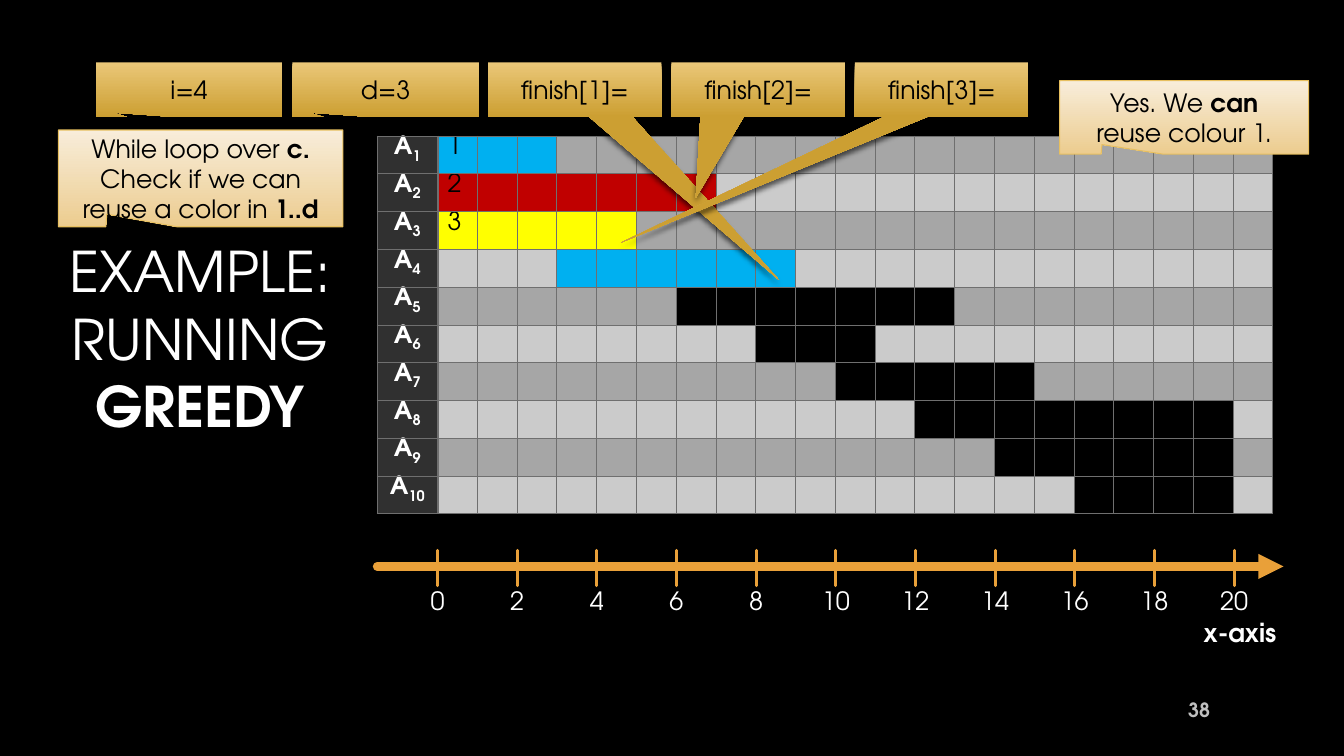
from lxml import etree
from pptx import Presentation
from pptx.dml.color import RGBColor
from pptx.enum.shapes import MSO_CONNECTOR, MSO_SHAPE
from pptx.enum.text import MSO_ANCHOR, PP_ALIGN
from pptx.oxml.ns import qn
from pptx.util import Inches, Pt

LEFT, CENTER, RIGHT = PP_ALIGN.LEFT, PP_ALIGN.CENTER, PP_ALIGN.RIGHT
TOP, MIDDLE = MSO_ANCHOR.TOP, MSO_ANCHOR.MIDDLE
CALLOUT, STRAIGHT = MSO_SHAPE.RECTANGULAR_CALLOUT, MSO_CONNECTOR.STRAIGHT
FONT = "TeX Gyre Adventor"
WHITE, BLACK, ORANGE, GRID = "FFFFFF", "000000", "E9A039", "6F6F6F"
HEADER, BANDS = "303030", ("A6A6A6", "CBCBCB")
BLUE, RED, YELLOW = "00B0F0", "C00000", "FFFF00"

# Text is a list of paragraphs; each paragraph is a list of (text, bold) runs.
TITLE = [[("EXAMPLE: RUNNING ", False), ("GREEDY", True)]]

# start, finish, colour, colour number shown
ACTIVITIES = [
    (0, 3, BLUE, "1"), (0, 7, RED, "2"), (0, 5, YELLOW, "3"), (3, 9, BLUE, ""),
    (6, 13, BLACK, ""), (8, 11, BLACK, ""), (10, 15, BLACK, ""),
    (12, 20, BLACK, ""), (14, 20, BLACK, ""), (16, 20, BLACK, ""),
]
SLOTS = 21

# left, top, width, height, pointer, text
NOTES = [
    (10.51, 0.8, 2.47, 0.73, (-0.33, 0.37),
     [[("Yes. We ", False), ("can\v", True), ("reuse colour 1.", False)]]),
    (0.58, 1.29, 2.82, 0.96, (-0.33, 0.37),
     [[("While loop over ", False), ("c.", True)],
      [("Check if we can reuse a color in ", False), ("1..d", True)]]),
]
# left, width, pointer, text
VARIABLES = [
    (0.95, 1.85, (-0.41, 0.42), "i=4"),
    (2.9, 1.85, (-0.41, 0.42), "d=3"),
    (4.84, 1.72, (1.18, 3.5), "finish[1]="),
    (6.66, 1.72, (-0.36, 1.99), "finish[2]="),
    (8.48, 1.72, (-1.85, 2.81), "finish[3]="),
]

TABLE_X, TABLE_Y, TABLE_W, TABLE_H, HEAD_W = 3.74, 1.35, 8.89, 3.75, 0.6
ZERO_X, TICK_GAP, LABEL_W = 4.34, 0.79, 0.9
AXIS_Y, AXIS_END = 5.62, 12.73


def rgb(value):
    return RGBColor.from_string(value)


def write(tf, paragraphs, size=18, color=WHITE, align=CENTER, anchor=TOP, wrap=True):
    tf.word_wrap = wrap
    tf.vertical_anchor = anchor
    for i, runs in enumerate(paragraphs):
        p = tf.paragraphs[0] if i == 0 else tf.add_paragraph()
        add_runs(p, runs, size, color, align)


def add_runs(p, runs, size=18, color=WHITE, align=CENTER):
    p.alignment = align
    for text, bold in runs:
        for i, line in enumerate(text.split("\v")):
            if i:
                p.add_line_break()
            if line:
                r = p.add_run()
                r.text = line
                r.font.name, r.font.size, r.font.bold = FONT, Pt(size), bold
                r.font.color.rgb = rgb(color)


def add_text(s, x, y, w, text, bold=False, **fmt):
    box = s.shapes.add_textbox(Inches(x), Inches(y), Inches(w), Inches(0.4))
    write(box.text_frame, [[(text, bold)]], **fmt)


def add_line(s, x1, y1, x2, y2, width, arrow=False):
    line = s.shapes.add_connector(STRAIGHT, Inches(x1), Inches(y1), Inches(x2), Inches(y2))
    line.line.color.rgb = rgb(ORANGE)
    line.line.width = Pt(width)
    sp_pr = line._element.spPr
    ln = sp_pr.find(qn("a:ln"))
    ln.set("cap", "rnd")
    if arrow:
        etree.SubElement(ln, qn("a:tailEnd"), type="triangle")
    etree.SubElement(sp_pr, qn("a:effectLst"))


def add_callout(s, x, y, w, h, pointer, paragraphs, colors, border=None):
    """Add a callout with a vertical gradient; one without a border casts a shadow."""
    sp = s.shapes.add_shape(CALLOUT, Inches(x), Inches(y), Inches(w), Inches(h))
    sp.adjustments[0], sp.adjustments[1] = pointer
    sp.fill.gradient()
    sp.fill.gradient_angle = 270
    for stop, color in zip(sp.fill.gradient_stops, colors):
        stop.color.rgb = rgb(color)
    sp.shadow.inherit = False
    if border:
        sp.line.color.rgb = rgb(border)
        sp.line.width = Pt(0.75)
    else:
        sp.line.fill.background()
        shadow = etree.SubElement(
            sp._element.spPr.find(qn("a:effectLst")), qn("a:outerShdw"),
            blurRad=str(Pt(4)), dist=str(Pt(3)), dir="5400000", rotWithShape="0")
        tint = etree.SubElement(shadow, qn("a:srgbClr"), val=BLACK)
        etree.SubElement(tint, qn("a:alpha"), val="60000")
    write(sp.text_frame, paragraphs, color=BLACK, anchor=MIDDLE)


def style_cell(cell, color, right_width=0.75):
    cell.margin_top = cell.margin_bottom = 0
    tc_pr = cell._tc.get_or_add_tcPr()
    for side in "LRTB":
        width = right_width if side == "R" else 0.75
        ln = etree.SubElement(tc_pr, qn("a:ln" + side), w=str(Pt(width)))
        fill = etree.SubElement(ln, qn("a:solidFill"))
        etree.SubElement(fill, qn("a:srgbClr"), val=GRID)
    cell.fill.solid()
    cell.fill.fore_color.rgb = rgb(color)


def add_schedule(s):
    table = s.shapes.add_table(len(ACTIVITIES), SLOTS + 1, Inches(TABLE_X), Inches(TABLE_Y),
                               Inches(TABLE_W), Inches(TABLE_H)).table
    table.first_row = table.horz_banding = False
    for i, column in enumerate(table.columns):
        column.width = Inches((TABLE_W - HEAD_W) / SLOTS if i else HEAD_W)
    for i, (start, finish, color, number) in enumerate(ACTIVITIES):
        table.rows[i].height = Inches(TABLE_H / len(ACTIVITIES))
        head = table.cell(i, 0)
        style_cell(head, HEADER, right_width=1.5)
        p = head.text_frame.paragraphs[0]
        add_runs(p, [("A", True), (str(i + 1), True)])
        p.runs[1]._r.get_or_add_rPr().set("baseline", "-25000")
        for slot in range(SLOTS):
            cell = table.cell(i, slot + 1)
            style_cell(cell, color if start <= slot < finish else BANDS[i % 2])
            if slot == 0 and number:
                add_runs(cell.text_frame.paragraphs[0], [(number, False)],
                         color=BLACK, align=LEFT)


def add_axis(s):
    add_line(s, TABLE_X, AXIS_Y, AXIS_END, AXIS_Y, 6, arrow=True)
    add_text(s, 11.84, 6.08, 0.93, "x-axis", bold=True, align=LEFT, wrap=False)
    for i in range(11):
        x = ZERO_X + i * TICK_GAP
        add_line(s, x, 5.46, x, 5.81, 2.25)
        add_text(s, x - LABEL_W / 2, 5.76, LABEL_W, str(2 * i))


def main():
    prs = Presentation()
    prs.slide_width, prs.slide_height = Inches(13.33), Inches(7.5)
    s = prs.slides.add_slide(prs.slide_layouts[5])
    s.background.fill.solid()
    s.background.fill.fore_color.rgb = rgb(BLACK)

    title = s.shapes.title
    title.left, title.top = Inches(0.37), Inches(1.35)
    title.width, title.height = Inches(3.23), Inches(4)
    write(title.text_frame, TITLE, size=40, anchor=MIDDLE)

    add_schedule(s)
    add_axis(s)
    for x, y, w, h, pointer, paragraphs in NOTES:
        add_callout(s, x, y, w, h, pointer, paragraphs, ("F8EDDA", "ECCC8F"), border="E7BF5F")
    for x, w, pointer, text in VARIABLES:
        add_callout(s, x, 0.62, w, 0.54, pointer, [[(text, False)]], ("EAC778", "CC9F32"))
    add_text(s, 11.5, 6.84, 0.6, "38", bold=True, size=14, color="BFBFBF",
             align=RIGHT, anchor=MIDDLE)
    prs.save("out.pptx")


if __name__ == "__main__":
    main()
